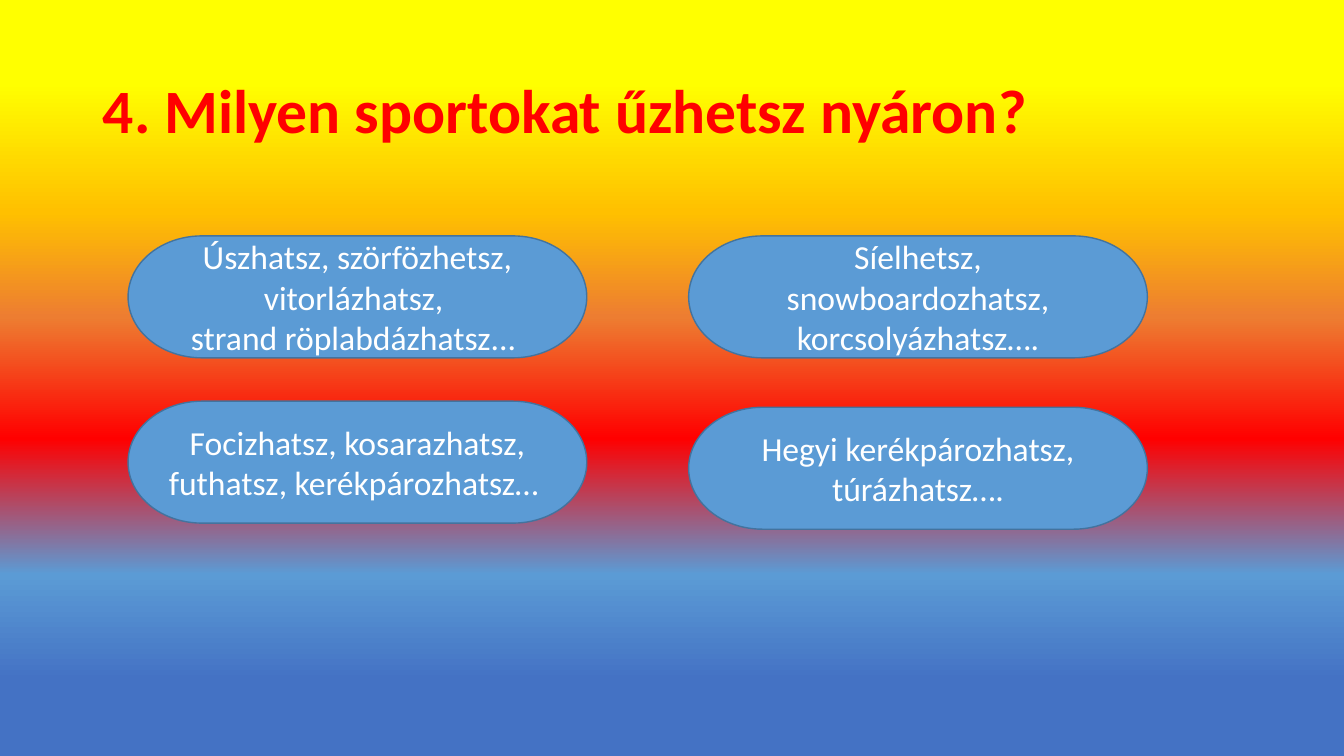
from lxml.etree import SubElement
from pptx import Presentation
from pptx.dml.color import RGBColor
from pptx.enum.shapes import MSO_SHAPE
from pptx.enum.text import MSO_ANCHOR as ANCHOR, PP_ALIGN as ALIGN
from pptx.oxml.ns import qn
from pptx.util import Emu, Pt

EMU_PER_PX = 9144  # 100 px to the inch
FONT = "Calibri"
SKY = [(11, "FFFF00"), (28, "FFC000"), (42, "ED7D31"),
       (58, "FF0000"), (76, "5B9BD5"), (90, "4472C4")]
ANSWER_WIDTH, ANSWER_HEIGHT = 455, 121
LEFT_COLUMN, RIGHT_COLUMN = 127, 683
ANSWERS = [
    (LEFT_COLUMN, 234, ["Úszhatsz, szörfözhetsz, vitorlázhatsz, ",
                        "strand röplabdázhatsz... "]),
    (RIGHT_COLUMN, 234, ["Síelhetsz, snowboardozhatsz, korcsolyázhatsz…."]),
    (LEFT_COLUMN, 398, ["Focizhatsz, kosarazhatsz, futhatsz, kerékpározhatsz… "]),
    (RIGHT_COLUMN, 404, ["Hegyi kerékpározhatsz, túrázhatsz…."]),
]


def px(length):
    return Emu(length * EMU_PER_PX)


def color(hex_string):
    return RGBColor.from_string(hex_string)


def add_run(paragraph, text, size, hex_string, bold=False):
    run = paragraph.add_run()
    run.text = text
    run.font.name = FONT
    run.font.size = Pt(size)
    run.font.bold = bold
    run.font.color.rgb = color(hex_string)


def set_background(slide, stops):
    fill = slide.background.fill
    fill.gradient()
    fill.gradient_angle = 270  # top to bottom
    stop_list = next(slide.element.iter(qn("a:gsLst")))
    for stop in list(stop_list):
        stop_list.remove(stop)
    for percent, hex_string in stops:
        stop = SubElement(stop_list, qn("a:gs"), pos=str(percent * 1000))
        SubElement(stop, qn("a:srgbClr"), val=hex_string)


def set_title(slide, text):
    title = slide.shapes.title
    title.left, title.top = px(92), px(40)
    title.width, title.height = px(1150), px(145)
    title.text_frame.vertical_anchor = ANCHOR.MIDDLE
    paragraph = title.text_frame.paragraphs[0]
    paragraph.alignment = ALIGN.LEFT
    paragraph.line_spacing = 0.9
    add_run(paragraph, text, 44, "FF0000", bold=True)


def add_answer(slide, left, top, lines):
    shape = slide.shapes.add_shape(
        MSO_SHAPE.FLOWCHART_TERMINATOR,
        px(left), px(top), px(ANSWER_WIDTH), px(ANSWER_HEIGHT))
    shape.shadow.inherit = False
    shape.fill.solid()
    shape.fill.fore_color.rgb = color("5B9BD5")
    shape.line.color.rgb = color("43739E")
    shape.line.width = Pt(1)
    frame = shape.text_frame
    frame.word_wrap = True
    frame.vertical_anchor = ANCHOR.MIDDLE
    for index, line in enumerate(lines):
        paragraph = frame.add_paragraph() if index else frame.paragraphs[0]
        paragraph.alignment = ALIGN.CENTER
        add_run(paragraph, line, 24, "FFFFFF")


def main():
    presentation = Presentation()
    presentation.slide_width, presentation.slide_height = px(1333), px(750)
    title_only = presentation.slide_layouts[5]
    slide = presentation.slides.add_slide(title_only)

    # Background and question
    set_background(slide, SKY)
    set_title(slide, "4. Milyen sportokat űzhetsz nyáron?")

    # Possible answers
    for left, top, lines in ANSWERS:
        add_answer(slide, left, top, lines)

    presentation.save("out.pptx")


if __name__ == "__main__":
    main()
